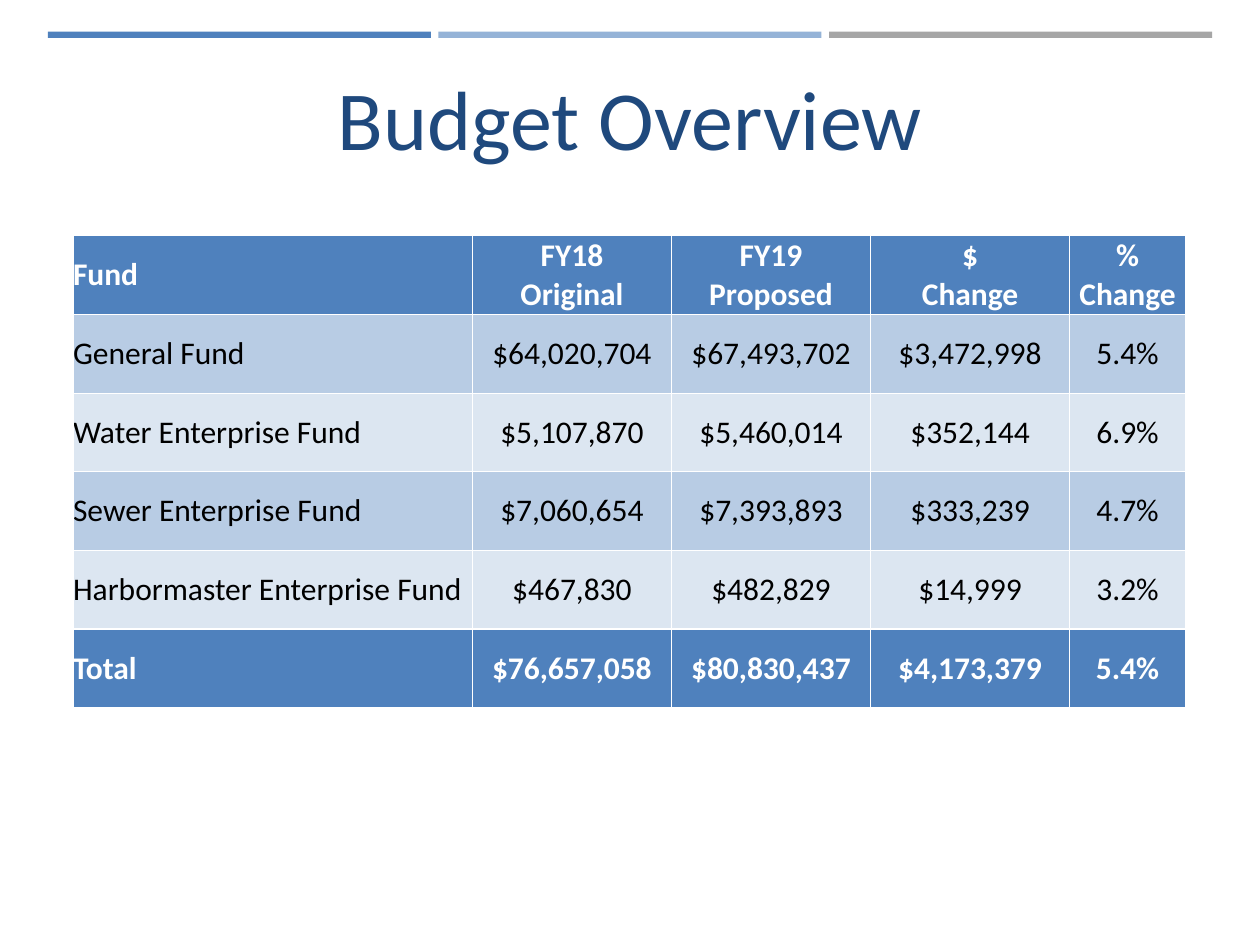
from lxml.etree import SubElement
from pptx import Presentation
from pptx.dml.color import RGBColor
from pptx.enum.shapes import MSO_SHAPE as Shape
from pptx.enum.text import MSO_ANCHOR as Anchor, PP_ALIGN as Align
from pptx.oxml.ns import qn
from pptx.util import Inches, Pt

BLUE, LIGHT_BLUE, GRAY, NAVY = "4F81BD", "95B3D7", "A6A6A6", "1F497D"
BANDS = ["B8CCE4", "DCE6F1"]
WHITE, BLACK = "FFFFFF", "000000"
COLUMN_WIDTHS = [3.17, 1.58, 1.58, 1.58, 0.92]
ROW_HEIGHT = 0.625
FUNDS = [
    ["Fund", "FY18\nOriginal", "FY19\nProposed", "$\nChange", "% Change"],
    ["General Fund", "$64,020,704", "$67,493,702", "$3,472,998", "5.4%"],
    ["Water Enterprise Fund", "$5,107,870", "$5,460,014", "$352,144", "6.9%"],
    ["Sewer Enterprise Fund", "$7,060,654", "$7,393,893", "$333,239", "4.7%"],
    ["Harbormaster Enterprise Fund", "$467,830", "$482,829", "$14,999", "3.2%"],
    ["Total", "$76,657,058", "$80,830,437", "$4,173,379", "5.4%"],
]


def set_fill(fill, color):
    fill.solid()
    fill.fore_color.rgb = RGBColor.from_string(color)


def write_text(tf, text, *, size, color, bold=False, align=Align.CENTER):
    tf.word_wrap = True
    for i, line in enumerate(text.split("\n")):
        p = tf.add_paragraph() if i else tf.paragraphs[0]
        p.alignment = align
        r = p.add_run()
        r.text = line
        r.font.name = "Calibri"
        r.font.size = Pt(size)
        r.font.bold = bold
        r.font.color.rgb = RGBColor.from_string(color)


def add_bar(slide, left, color):
    sp = slide.shapes.add_shape(
        Shape.RECTANGLE, Inches(left), Inches(0.25), Inches(3.04), Inches(0.05))
    sp.shadow.inherit = False
    sp.line.fill.background()
    set_fill(sp.fill, color)


def add_title(slide, text):
    sp = slide.shapes.add_textbox(Inches(0.5), Inches(0.3), Inches(9), Inches(1.25))
    sp.text_frame.vertical_anchor = Anchor.MIDDLE
    write_text(sp.text_frame, text, size=48, color=NAVY)


def add_border(cell, side, width):
    ln = SubElement(cell._tc.get_or_add_tcPr(), qn(f"a:ln{side}"), w=str(Pt(width)))
    fill = SubElement(ln, qn("a:solidFill"))
    SubElement(fill, qn("a:srgbClr"), val=WHITE)


def format_cell(cell, row, col):
    last_row, last_col = len(FUNDS) - 1, len(COLUMN_WIDTHS) - 1
    strong = row in (0, last_row)
    cell.margin_left = cell.margin_right = cell.margin_top = cell.margin_bottom = 0
    cell.vertical_anchor = Anchor.MIDDLE
    borders = [
        ("L", col > 0, 0.5),
        ("R", col < last_col, 0.5),
        ("T", row > 0, 1.5 if row == last_row else 0.5),
        ("B", row < last_row, 1.5 if row == last_row - 1 else 0.5),
    ]
    for side, inner, width in borders:
        if inner:
            add_border(cell, side, width)
    set_fill(cell.fill, BLUE if strong else BANDS[(row - 1) % 2])
    write_text(cell.text_frame, FUNDS[row][col], size=18, bold=strong,
               color=WHITE if strong else BLACK,
               align=Align.CENTER if col else Align.LEFT)


def add_fund_table(slide):
    table = slide.shapes.add_table(
        len(FUNDS), len(COLUMN_WIDTHS), Inches(0.58), Inches(1.87),
        Inches(sum(COLUMN_WIDTHS)), Inches(ROW_HEIGHT * len(FUNDS))).table
    table.horz_banding = False
    for column, width in zip(table.columns, COLUMN_WIDTHS):
        column.width = Inches(width)
    for row in range(len(FUNDS)):
        for col in range(len(COLUMN_WIDTHS)):
            format_cell(table.cell(row, col), row, col)


def main():
    prs = Presentation()
    prs.slide_width, prs.slide_height = Inches(10), Inches(7.5)
    slide = prs.slides.add_slide(prs.slide_layouts[6])
    for i, color in enumerate([BLUE, LIGHT_BLUE, GRAY]):
        add_bar(slide, 0.38 + 3.1 * i, color)
    add_title(slide, "Budget Overview")
    add_fund_table(slide)
    prs.save("out.pptx")


if __name__ == "__main__":
    main()
